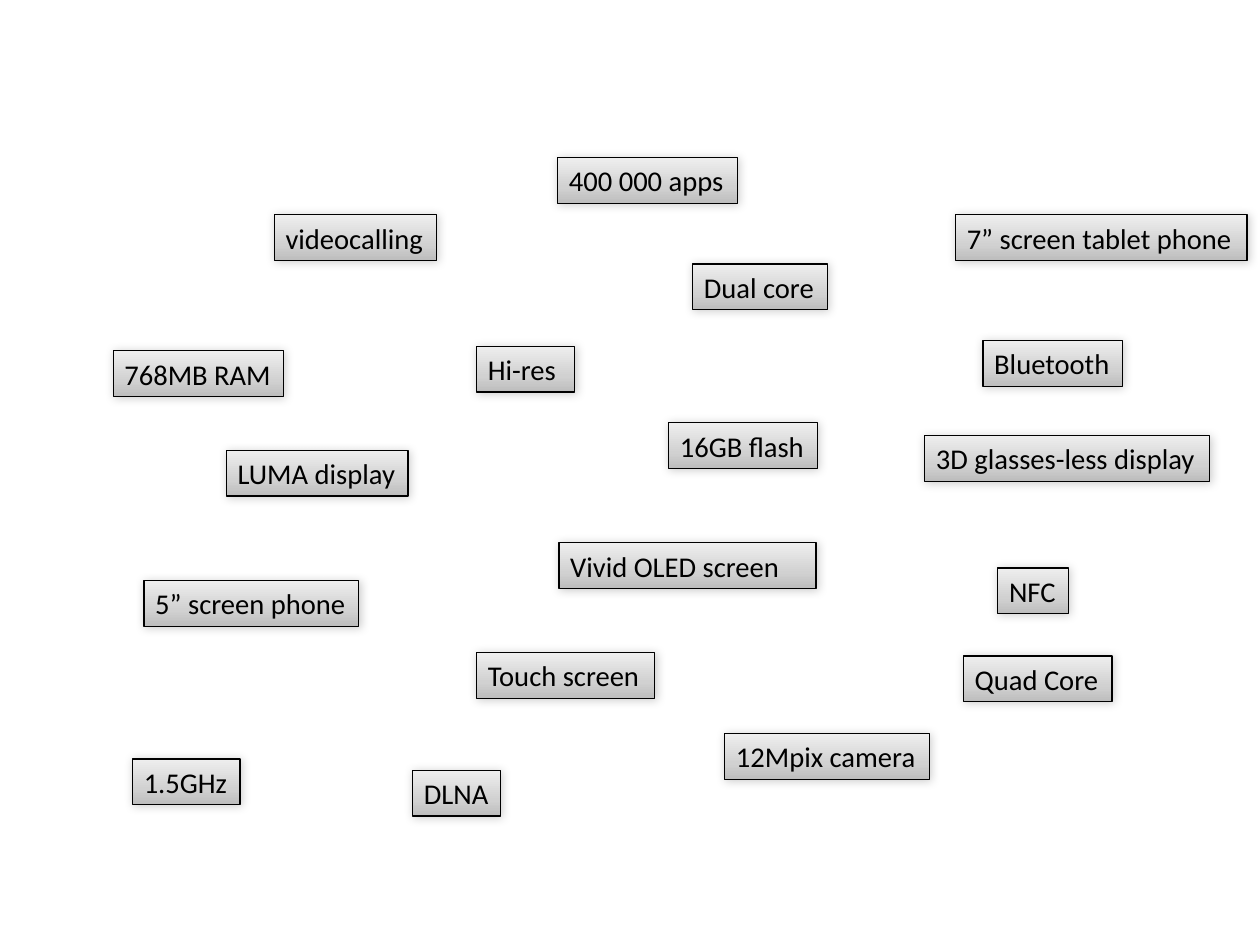
from lxml import etree
from pptx import Presentation
from pptx import util as u
from pptx.dml.color import RGBColor
from pptx.enum import shapes, text
from pptx.oxml.ns import nsdecls

COLORS = {"ink": "000000", "dark": "BDBDBD", "mid": "D1D1D1", "light": "EEEEEE"}
TAG_HEIGHT = 0.4

FEATURES = [
    ("Hi-res", 4.17, 3.03, 0.86),
    ("Vivid OLED screen", 4.89, 4.75, 2.25),
    ("5” screen phone", 1.26, 5.08, 1.88),
    ("7” screen tablet phone", 8.36, 1.88, 2.55),
    ("LUMA display", 1.98, 3.94, 1.59),
    ("3D glasses-less display", 8.09, 3.81, 2.49),
    ("Dual core", 6.06, 2.31, 1.18),
    ("Quad Core", 8.43, 5.74, 1.3),
    ("12Mpix camera", 6.34, 6.42, 1.79),
    ("videocalling", 2.4, 1.88, 1.42),
    ("1.5GHz", 1.16, 6.64, 0.94),
    ("768MB RAM", 0.99, 3.07, 1.49),
    ("16GB flash", 5.85, 3.7, 1.3),
    ("400 000 apps", 4.88, 1.38, 1.57),
    ("DLNA", 3.61, 6.74, 0.77),
    ("Bluetooth", 8.6, 2.98, 1.22),
    ("NFC", 8.73, 4.97, 0.62),
    ("Touch screen", 4.17, 5.71, 1.56),
]


def add_gradient(tag):
    stops = "".join(
        f'<a:gs pos="{percent * 1000}"><a:srgbClr val="{COLORS[shade]}"/></a:gs>'
        for percent, shade in ((0, "dark"), (35, "mid"), (100, "light"))
    )
    tag._element.spPr.append(etree.fromstring(
        f'<a:gradFill {nsdecls("a")} rotWithShape="1"><a:gsLst>{stops}</a:gsLst>'
        f'<a:lin ang="{270 * 60000}" scaled="0"/></a:gradFill>'
    ))


def add_soft_shadow(tag):
    tag._element.spPr.append(etree.fromstring(
        f'<a:effectLst {nsdecls("a")}><a:outerShdw blurRad="{u.Pt(6)}" '
        f'dist="{u.Pt(1)}" dir="{45 * 60000}" rotWithShape="0">'
        f'<a:srgbClr val="{COLORS["ink"]}"><a:alpha val="20000"/></a:srgbClr>'
        '</a:outerShdw></a:effectLst>'
    ))


def add_feature(slide, label, left, top, width):
    tag = slide.shapes.add_shape(
        shapes.MSO_SHAPE.RECTANGLE, u.Inches(left), u.Inches(top),
        u.Inches(width), u.Inches(TAG_HEIGHT))
    add_gradient(tag)
    tag.line.color.rgb = RGBColor.from_string(COLORS["ink"])
    tag.line.width = u.Pt(0.75)
    add_soft_shadow(tag)

    frame = tag.text_frame
    frame.text = label
    frame.word_wrap = False
    frame.auto_size = text.MSO_AUTO_SIZE.SHAPE_TO_FIT_TEXT
    frame.vertical_anchor = text.MSO_ANCHOR.TOP
    paragraph = frame.paragraphs[0]
    paragraph.alignment = text.PP_ALIGN.LEFT
    font = paragraph.runs[0].font
    font.name = "Calibri"
    font.size = u.Pt(18)
    font.color.rgb = RGBColor.from_string(COLORS["ink"])


def main():
    deck = Presentation()
    deck.slide_width = u.Cm(28)
    deck.slide_height = u.Cm(21)
    slide = deck.slides.add_slide(deck.slide_layouts[6])
    for feature in FEATURES:
        add_feature(slide, *feature)
    deck.save("out.pptx")


if __name__ == "__main__":
    main()
